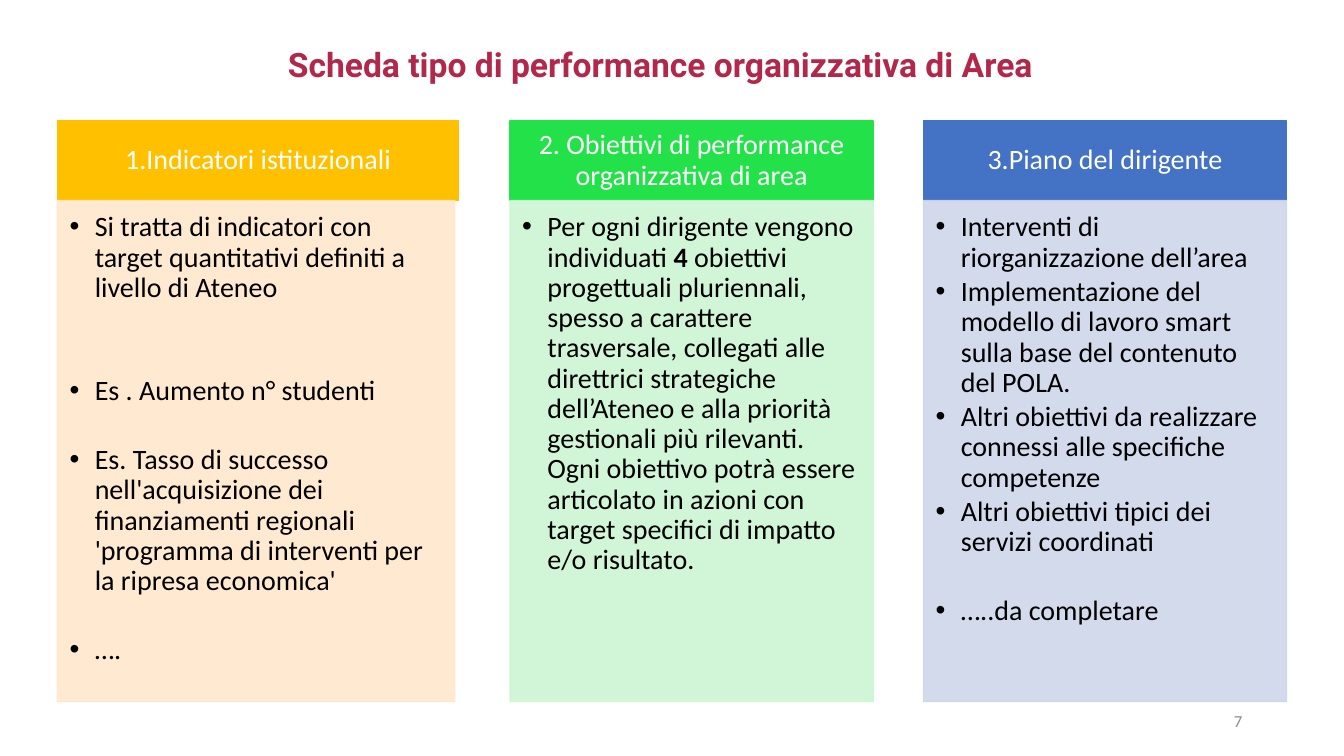
from dataclasses import dataclass

from lxml import etree
from pptx import Presentation
from pptx.dml.color import RGBColor
from pptx.enum.shapes import MSO_SHAPE
from pptx.enum.text import MSO_ANCHOR, PP_ALIGN
from pptx.oxml.ns import qn
from pptx.util import Inches, Pt

RECT = MSO_SHAPE.RECTANGLE
TOP, MIDDLE = MSO_ANCHOR.TOP, MSO_ANCHOR.MIDDLE
LEFT, CENTER, RIGHT = PP_ALIGN.LEFT, PP_ALIGN.CENTER, PP_ALIGN.RIGHT

HEAD_TOP, HEAD_HIGH = 1.2, 0.79
BODY_TOP, BODY_HIGH = 1.99, 4.97
AFTER, GAP = 3, 24.6

TITLE = {"name": "Roboto", "size": Pt(24), "bold": True}
TEXT = {"name": "Calibri", "size": Pt(20)}
SMALL = {"name": "Calibri", "size": Pt(12)}


@dataclass
class Point:
    """A bullet; ** marks bold words, gap counts the lines left free below."""
    text: str
    gap: int = 0


@dataclass
class Column:
    left: float
    wide: float
    body_wide: float
    dark: str
    light: str
    head: str
    points: list[Point]


COLUMNS = [
    Column(0.57, 3.98, 3.94, "FFC000", "FFE8CC", "1.Indicatori istituzionali", [
        Point("Si tratta di indicatori con target quantitativi definiti a "
              "livello di Ateneo", 2),
        Point("Es . Aumento n° studenti", 1),
        Point("Es. Tasso di successo nell'acquisizione dei finanziamenti "
              "regionali 'programma di interventi per la ripresa economica'", 1),
        Point("…."),
    ]),
    Column(5.06, 3.6, 3.6, "23E148", "CCF6D3",
           "2. Obiettivi di performance organizzativa di area", [
        Point("Per ogni dirigente vengono individuati **4** obiettivi "
              "progettuali pluriennali, spesso a carattere trasversale, "
              "collegati alle direttrici strategiche dell’Ateneo e alla "
              "priorità gestionali più rilevanti. Ogni obiettivo potrà essere "
              "articolato in azioni con target specifici di impatto e/o "
              "risultato."),
    ]),
    Column(9.16, 3.6, 3.6, "4472C4", "CFD6EA", "3.Piano del dirigente", [
        Point("Interventi di riorganizzazione dell’area"),
        Point("Implementazione del modello di lavoro smart sulla base del "
              "contenuto del POLA."),
        Point("Altri obiettivi da realizzare connessi alle specifiche "
              "competenze"),
        Point("Altri obiettivi tipici dei servizi coordinati", 1),
        Point("…..da completare"),
    ]),
]


def color(code: str) -> RGBColor:
    return RGBColor.from_string(code)


def set_frame(frame, anchor, insets: tuple) -> None:
    frame.word_wrap = True
    frame.vertical_anchor = anchor
    sides = ("left", "top", "right", "bottom")
    for side, inset in zip(sides, insets):
        setattr(frame, f"margin_{side}", Inches(inset))


def write(para, text: str, style: dict, ink: str, align, pitch=0.9) -> None:
    para.alignment = align
    para.line_spacing = pitch
    for i, part in enumerate(text.split("**")):
        run = para.add_run()
        run.text = part
        for key, value in {"bold": i % 2 == 1, **style}.items():
            setattr(run.font, key, value)
        run.font.color.rgb = color(ink)


def add_bullet(para) -> None:
    props = para._p.get_or_add_pPr()
    props.set("marL", str(Inches(0.25)))
    props.set("indent", str(Inches(-0.25)))
    etree.SubElement(props, qn("a:buFont")).set("typeface", "Arial")
    etree.SubElement(props, qn("a:buChar")).set("char", "•")


def add_panel(slide, box: tuple, paint: str, alpha=100):
    panel = slide.shapes.add_shape(RECT, *map(Inches, box))
    panel.shadow.inherit = False
    panel.fill.solid()
    panel.fill.fore_color.rgb = color(paint)
    panel.line.color.rgb = color(paint)
    panel.line.width = Pt(1)
    if alpha < 100:
        for tint in list(panel._element.spPr.iter(qn("a:srgbClr"))):
            etree.SubElement(tint, qn("a:alpha")).set("val", str(alpha * 1000))
    return panel.text_frame


def add_label(slide, box: tuple, text: str, style: dict, ink: str,
              align, pitch: float) -> None:
    frame = slide.shapes.add_textbox(*map(Inches, box)).text_frame
    set_frame(frame, MIDDLE, (0.1, 0.05, 0.1, 0.05))
    write(frame.paragraphs[0], text, style, ink, align, pitch)


def add_column(slide, col: Column) -> None:
    head = add_panel(slide, (col.left, HEAD_TOP, col.wide, HEAD_HIGH), col.dark)
    set_frame(head, MIDDLE, (0.16, 0.09, 0.16, 0.09))
    write(head.paragraphs[0], col.head, TEXT, "FFFFFF", CENTER)

    box = (col.left, BODY_TOP, col.body_wide, BODY_HIGH)
    body = add_panel(slide, box, col.light, 90)
    set_frame(body, TOP, (0.12, 0.12, 0.16, 0.17))
    for i, point in enumerate(col.points):
        para = body.add_paragraph() if i else body.paragraphs[0]
        add_bullet(para)
        para.level = 1
        para.space_after = Pt(AFTER + GAP * point.gap)
        write(para, point.text, TEXT, "000000", LEFT)


def main() -> None:
    deck = Presentation()
    deck.slide_width, deck.slide_height = Inches(13.33), Inches(7.5)
    slide = deck.slides.add_slide(deck.slide_layouts[6])
    add_label(slide, (0.8, 0.16, 11.5, 1),
              "Scheda tipo di performance organizzativa di Area",
              TITLE, "B2284B", CENTER, 0.9)
    for col in COLUMNS:
        add_column(slide, col)
    add_label(slide, (9.42, 6.95, 3, 0.4), "7", SMALL, "8C8C8C", RIGHT, 1.0)
    deck.save("out.pptx")


if __name__ == "__main__":
    main()
